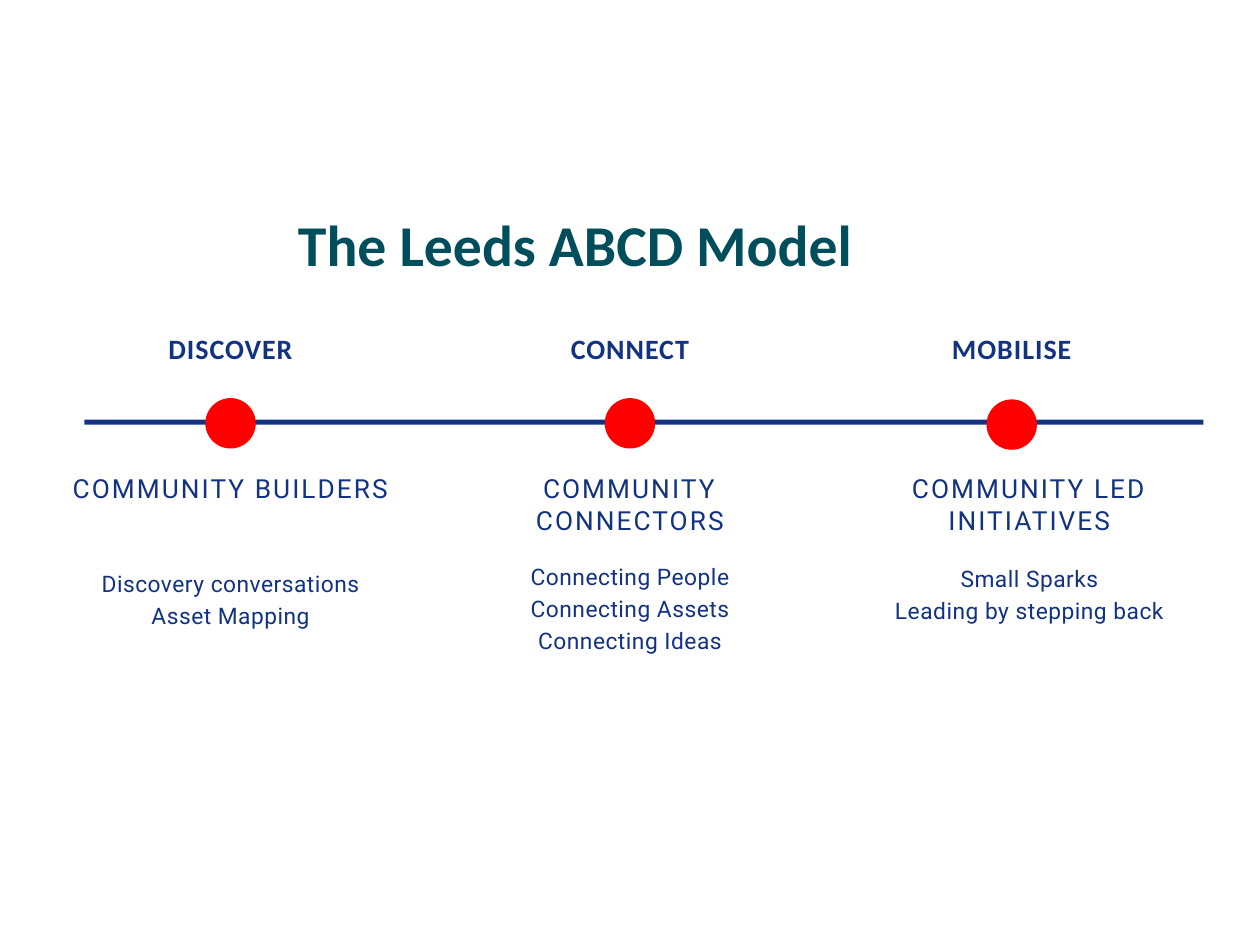
from pptx import Presentation
from pptx.dml.color import RGBColor
from pptx.enum.shapes import MSO_SHAPE
from pptx.enum.text import MSO_ANCHOR, PP_ALIGN
from pptx.util import Inches, Pt

NAVY, TEAL, RED = "123282", "004D5C", "FF0000"


def paint(color_format, color):
    color_format.rgb = RGBColor.from_string(color)


def write(box, place, text, font, size, leading, color=NAVY, bold=False, tracking=0):
    box.left, box.top, box.width, box.height = [Inches(length) for length in place]
    frame = box.text_frame
    frame.margin_left = frame.margin_right = frame.margin_top = frame.margin_bottom = 0
    frame.word_wrap = True
    frame.vertical_anchor = MSO_ANCHOR.TOP
    frame.text = text
    for para in frame.paragraphs:
        para.alignment = PP_ALIGN.CENTER
        para.line_spacing = Pt(leading)
        para.space_before = Pt(0)
        for span in para.runs:
            span.font.name = font
            span.font.size = Pt(size)
            span.font.bold = bold
            paint(span.font.color, color)
            span.font._element.set("spc", str(round(tracking * 100)))


deck = Presentation()
deck.slide_width, deck.slide_height = Inches(10), Inches(7.5)
page = deck.slides.add_slide(deck.slide_layouts[5])
shapes = page.shapes

write(shapes.title, (1.97, 1.54, 5.19, 0.63), "The Leeds ABCD Model",
      "Calibri", 33, 48, TEAL, bold=True)

timeline = shapes.add_shape(MSO_SHAPE.RECTANGLE, Inches(0.67), Inches(3.33),
                            Inches(8.88), Inches(0.04))
timeline.shadow.inherit = False
timeline.fill.solid()
paint(timeline.fill.fore_color, NAVY)
timeline.line.fill.background()

stages = [
    (1.83, 1.83, 3.16, "DISCOVER", "COMMUNITY BUILDERS", 4.49,
     ["Discovery conversations", "Asset Mapping"]),
    (5, 5, 3.16, "CONNECT", "COMMUNITY CONNECTORS", 4.43,
     ["Connecting People", "Connecting Assets", "Connecting Ideas"]),
    (8.03, 8.17, 3.17, "MOBILISE", "COMMUNITY LED INITIATIVES", 4.45,
     ["Small Sparks", "Leading by stepping back"]),
]
heading_width, column_width, dot_size = 3.39, 2.54, 0.4

for dot_center, text_center, dot_top, stage, role, details_top, details in stages:
    dot = shapes.add_shape(MSO_SHAPE.OVAL, Inches(dot_center - dot_size / 2),
                           Inches(dot_top), Inches(dot_size), Inches(dot_size))
    dot.shadow.inherit = False
    dot.fill.solid()
    paint(dot.fill.fore_color, RED)
    dot.line.fill.background()

    heading_left = dot_center - heading_width / 2
    column_left = text_center - column_width / 2
    write(shapes.add_textbox(0, 0, 0, 0), (heading_left, 2.63, heading_width, 0.26),
          stage, "Calibri", 16, 19.2, bold=True, tracking=0.6)
    write(shapes.add_textbox(0, 0, 0, 0), (column_left, 3.75, column_width, 0.5),
          role, "Roboto", 15, 18, tracking=1.2)
    write(shapes.add_textbox(0, 0, 0, 0),
          (column_left, details_top, column_width, 0.25 * len(details)),
          "\n".join(details), "Roboto", 13, 18.2, tracking=0.3)

deck.save("out.pptx")
